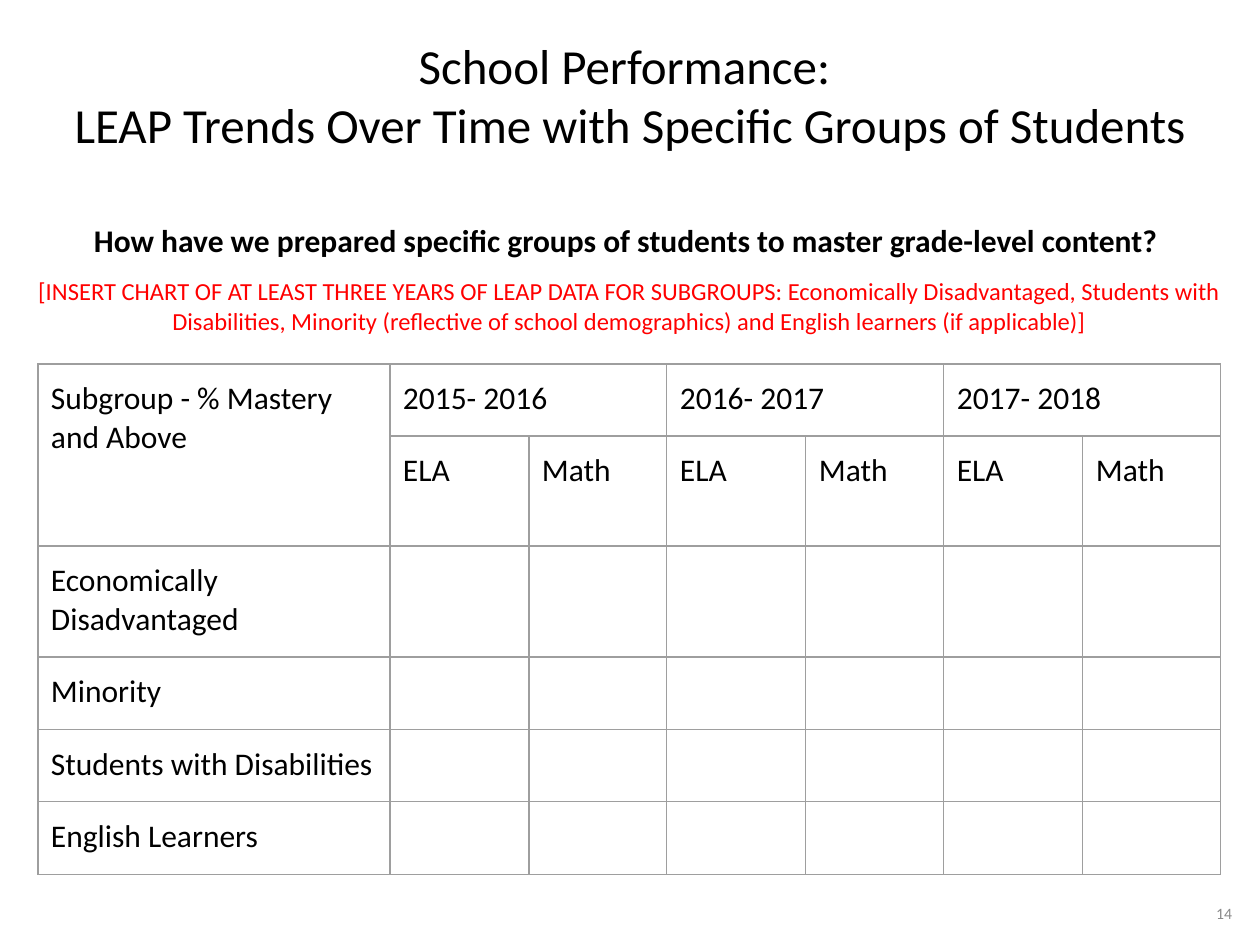
from dataclasses import dataclass

from lxml.etree import SubElement
from pptx import Presentation
from pptx.dml.color import RGBColor
from pptx.enum.text import MSO_ANCHOR as Anchor, PP_ALIGN as Align
from pptx.oxml.ns import qn
from pptx.util import Emu, Pt

EMU_PER_PX = 914400 / 126
FONT = "Calibri"
BLACK = RGBColor(0x00, 0x00, 0x00)
RED = RGBColor(0xFF, 0x00, 0x00)
GRAY = RGBColor(0x8A, 0x8A, 0x8A)
BORDER = RGBColor(0x9E, 0x9E, 0x9E)

YEARS = ("2015- 2016", "2016- 2017", "2017- 2018")
SUBJECTS = ("ELA", "Math")
SUBGROUPS = ("Economically Disadvantaged", "Minority",
             "Students with Disabilities", "English Learners")
COLUMN_WIDTHS = (352,) + (139, 138) * len(YEARS)
ROW_HEIGHTS = (72, 110, 111, 73, 72, 73)


@dataclass(frozen=True)
class Line:
    text: str
    size: int
    color: RGBColor = BLACK
    bold: bool = False
    space_before: int = 0


@dataclass(frozen=True)
class TextBlock:
    left: int
    top: int
    width: int
    height: int
    lines: tuple[Line, ...]
    align: Align = Align.CENTER
    anchor: Anchor = Anchor.MIDDLE
    inset_y: int = 13


TEXT_BLOCKS = (
    TextBlock(0, -2, 1260, 193, (
        Line("School Performance: \v"
             "LEAP Trends Over Time with Specific Groups of Students", 28),)),
    TextBlock(25, 208, 1209, 150, (
        Line("How have we prepared specific groups of students to master "
             "grade-level content? ", 18, bold=True),
        Line("[INSERT CHART OF AT LEAST THREE YEARS OF LEAP DATA FOR SUBGROUPS: "
             "Economically Disadvantaged, Students with Disabilities, Minority "
             "(reflective of school demographics) and English learners "
             "(if applicable)]", 14, RED, space_before=10)),
        anchor=Anchor.TOP),
    TextBlock(937, 882, 308, 63, (Line("14", 9, GRAY),), Align.RIGHT, inset_y=6),
)


def px(length: int) -> Emu:
    return Emu(round(length * EMU_PER_PX))


def style_font(font, size: int, color: RGBColor, bold: bool = False) -> None:
    font.name = FONT
    font.size = Pt(size)
    font.bold = bold
    font.color.rgb = color


def set_margins(target, x: int, y: int) -> None:
    target.margin_left = target.margin_right = px(x)
    target.margin_top = target.margin_bottom = px(y)


def add_text(slide, block: TextBlock) -> None:
    shape = slide.shapes.add_textbox(px(block.left), px(block.top),
                                     px(block.width), px(block.height))
    frame = shape.text_frame
    frame.word_wrap = True
    frame.vertical_anchor = block.anchor
    set_margins(frame, 13, block.inset_y)
    for index, line in enumerate(block.lines):
        paragraph = frame.add_paragraph() if index else frame.paragraphs[0]
        paragraph.text = line.text
        paragraph.alignment = block.align
        paragraph.space_before = Pt(line.space_before)
        style_font(paragraph.font, line.size, line.color, line.bold)


def style_cell(cell) -> None:
    """Give a cell its margins, font, thin gray borders and no fill."""
    set_margins(cell, 13, 16)
    style_font(cell.text_frame.paragraphs[0].font, 18, BLACK)
    properties = cell._tc.get_or_add_tcPr()
    for side in ("a:lnL", "a:lnR", "a:lnT", "a:lnB"):
        border = SubElement(properties, qn(side), w=str(Pt(0.75)))
        fill = SubElement(border, qn("a:solidFill"))
        SubElement(fill, qn("a:srgbClr"), val=str(BORDER))
    cell.fill.background()


def add_results_table(slide, left: int, top: int) -> None:
    table = slide.shapes.add_table(
        len(ROW_HEIGHTS), len(COLUMN_WIDTHS), px(left), px(top),
        px(sum(COLUMN_WIDTHS)), px(sum(ROW_HEIGHTS))).table
    table.first_row = table.horz_banding = False
    for column, width in zip(table.columns, COLUMN_WIDTHS):
        column.width = px(width)
    for row, height in zip(table.rows, ROW_HEIGHTS):
        row.height = px(height)

    table.cell(0, 0).merge(table.cell(1, 0))
    table.cell(0, 0).text = "Subgroup - % Mastery and Above"
    for year_index, year in enumerate(YEARS):
        first = 1 + year_index * len(SUBJECTS)
        table.cell(0, first).merge(table.cell(0, first + len(SUBJECTS) - 1))
        table.cell(0, first).text = year
        for offset, subject in enumerate(SUBJECTS):
            table.cell(1, first + offset).text = subject
    for row_index, subgroup in enumerate(SUBGROUPS, start=2):
        table.cell(row_index, 0).text = subgroup
    for cell in table.iter_cells():
        style_cell(cell)


def main() -> None:
    presentation = Presentation()
    presentation.slide_width = px(1260)
    presentation.slide_height = px(945)
    slide = presentation.slides.add_slide(presentation.slide_layouts[6])
    for block in TEXT_BLOCKS:
        add_text(slide, block)
    add_results_table(slide, 38, 364)
    presentation.save("out.pptx")


if __name__ == "__main__":
    main()
